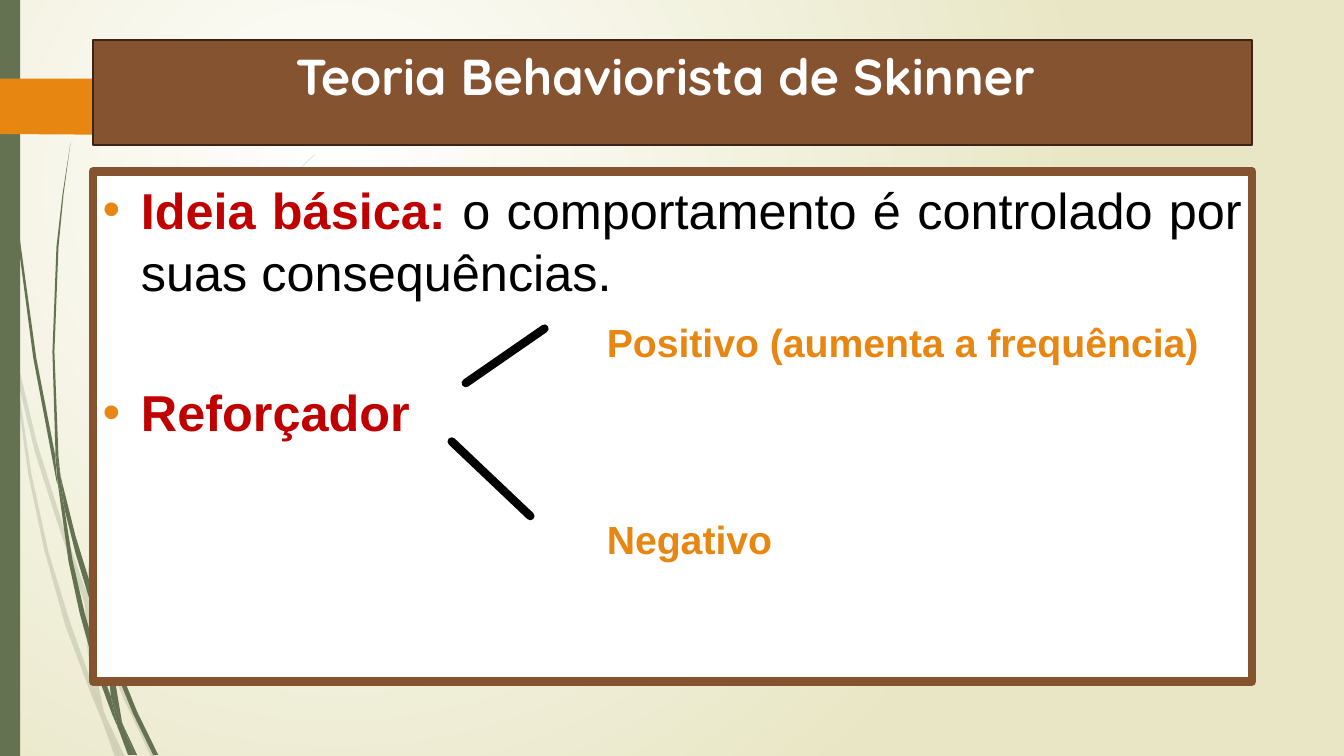
from pptx import Presentation
from pptx.dml.color import RGBColor
from pptx.enum.shapes import MSO_CONNECTOR, MSO_SHAPE
from pptx.enum.text import MSO_ANCHOR, MSO_AUTO_SIZE, PP_ALIGN
from pptx.oxml import parse_xml
from pptx.oxml.ns import nsdecls, qn
from pptx.util import Pt
from lxml import etree

PX = 9144  # EMU per px, 100 px to the inch
RECTANGLE = MSO_SHAPE.RECTANGLE
STRAIGHT = MSO_CONNECTOR.STRAIGHT
TOP = MSO_ANCHOR.TOP
CENTER, JUSTIFY = PP_ALIGN.CENTER, PP_ALIGN.JUSTIFY
NO_AUTOFIT = MSO_AUTO_SIZE.NONE
TITLE_ONLY = 5

COLORS = {
    "white": "FFFFFF", "cream": "E8E6C4", "moss": "647252", "orange": "E78712",
    "brown": "865331", "dark brown": "3B2415", "red": "C00000", "black": "000000",
}

# Outlines of the grass blades, in px from the slide's corner
PALE_BLADES = [
    [(11, 350), (9, 322), (0, 282), (0, 299), (10, 344)],
    [(58, 522), (84, 599), (85, 586), (62, 520), (36, 437), (14, 345), (17, 376), (35, 450)],
    [(92, 607), (88, 596), (88, 610), (123, 694), (150, 751), (155, 751), (127, 692)],
    [(119, 751), (124, 751), (105, 711)],
    [(93, 683), (70, 619), (48, 547), (31, 469), (17, 376), (11, 350), (28, 470), (44, 546),
     (65, 621), (92, 693), (101, 714), (99, 707)],
    [(84, 599), (87, 646), (93, 683), (96, 692), (105, 711), (103, 706), (91, 646), (88, 608)],
    [(88, 584), (97, 522), (110, 462), (160, 349), (229, 245), (268, 198), (290, 175), (312, 154),
     (312, 153), (289, 175), (268, 197), (228, 244), (158, 348), (107, 461), (93, 521), (85, 584),
     (85, 586), (88, 596)],
    [(101, 714), (114, 751), (119, 751)],
    [(88, 608), (88, 596), (85, 586), (84, 599)],
    [(96, 692), (93, 683), (99, 707), (101, 714), (119, 751), (105, 711)],
]
GREEN_BLADES = [
    [(7, 110), (17, 233), (33, 355), (56, 477), (57, 481), (55, 457), (55, 453), (36, 355),
     (19, 232), (8, 109), (5, 48), (4, 0), (3, 0), (4, 48)],
    [(88, 592), (106, 645), (106, 631), (93, 590), (75, 532), (60, 472), (64, 505), (75, 549)],
    [(113, 649), (110, 641), (111, 656), (132, 708), (152, 749), (157, 749), (136, 706)],
    [(110, 691), (98, 657), (84, 608), (72, 556), (64, 505), (57, 477), (68, 557), (79, 608),
     (93, 659), (111, 708), (117, 722), (116, 717)],
    [(60, 472), (58, 453), (54, 349), (58, 245), (63, 193), (70, 141), (62, 193), (56, 245),
     (52, 349), (55, 449)],
    [(133, 749), (136, 749), (122, 719)],
    [(57, 477), (64, 505), (60, 472), (55, 449), (55, 453)],
    [(117, 722), (127, 749), (131, 749)],
    [(106, 645), (110, 691), (116, 706), (122, 719), (121, 716), (111, 656), (109, 651)],
    [(116, 706), (110, 691), (116, 717), (117, 722), (130, 749), (133, 749), (122, 719)],
]
TAB_OUTLINE = [(173, 108), (148, 133), (146, 134), (0, 133), (0, 78), (146, 78), (148, 79),
               (173, 104)]


def rgb(name):
    return RGBColor.from_string(COLORS[name])


def paint(shape, fill, outline=None, weight=0):
    shape.shadow.inherit = False
    shape.fill.solid()
    shape.fill.fore_color.rgb = rgb(fill)
    if outline:
        shape.line.color.rgb = rgb(outline)
        shape.line.width = Pt(weight)
    else:
        shape.line.fill.background()


def place(shape, box):
    shape.left, shape.top, shape.width, shape.height = (side * PX for side in box)


def set_font(font, size, color, bold=True, name="Arial"):
    font.name, font.size, font.bold = name, Pt(size), bold
    font.color.rgb = rgb(color)


def paint_background(slide):
    """Radial gradient, white in the upper left, cream at the edges."""
    slide.background.fill.gradient()
    old = slide.background.fill._xPr.find(qn("a:gradFill"))
    gradient = parse_xml(
        f'<a:gradFill rotWithShape="1" {nsdecls("a")}><a:gsLst>'
        f'<a:gs pos="0"><a:srgbClr val="{COLORS["white"]}"/></a:gs>'
        f'<a:gs pos="100000"><a:srgbClr val="{COLORS["cream"]}"/></a:gs></a:gsLst>'
        '<a:path path="circle"><a:fillToRect l="50000" t="50000" r="100000" b="100000"/></a:path>'
        '</a:gradFill>')
    old.getparent().replace(old, gradient)


def add_outline(shapes, points, color, opacity=100):
    builder = shapes.build_freeform(*points[0], scale=PX)
    builder.add_line_segments(points[1:], close=True)
    outline = builder.convert_to_shape()
    paint(outline, color)
    if opacity < 100:
        tint = next(outline.element.spPr.iter(qn("a:srgbClr")))
        etree.SubElement(tint, qn("a:alpha"), val=str(opacity * 1000))


def add_decoration(slide, box):
    """Grass blades, the moss band filling the box, and the orange tab."""
    for blades, opacity in ((PALE_BLADES, 20), (GREEN_BLADES, 100)):
        tuft = slide.shapes.add_group_shape()
        for blade in blades:
            add_outline(tuft.shapes, blade, "moss", opacity)
    band = slide.shapes.add_shape(RECTANGLE, *(side * PX for side in box))
    paint(band, "moss")
    add_outline(slide.shapes, TAB_OUTLINE, "orange")


def add_title(slide, box):
    title = slide.shapes.title
    slide.shapes.element.append(title.element)  # in front of the decoration
    place(title, box)
    paint(title, "brown", "dark brown", 1.25)
    frame = title.text_frame
    frame.text = "Teoria Behaviorista de Skinner "
    frame.vertical_anchor = TOP
    frame.auto_size = NO_AUTOFIT
    heading = frame.paragraphs[0]
    heading.alignment = CENTER
    set_font(heading.font, 36, "white", name="Quicksand")


def indent(paragraph, margin, bulleted):
    properties = paragraph._p.get_or_add_pPr()
    properties.set("marL", str(margin * PX))
    properties.set("indent", str(-margin * PX if bulleted else 0))
    if bulleted:
        color = etree.SubElement(properties, qn("a:buClr"))
        etree.SubElement(color, qn("a:srgbClr"), val=COLORS["orange"])
        etree.SubElement(properties, qn("a:buFont"), typeface="Arial")
        etree.SubElement(properties, qn("a:buChar"), char="•")


def add_branch(slide, start, end):
    branch = slide.shapes.add_connector(STRAIGHT, *(side * PX for side in (*start, *end)))
    branch.line.color.rgb = rgb("black")
    branch.line.width = Pt(6)
    branch.line._get_or_add_ln().set("cap", "rnd")
    etree.SubElement(branch.element.spPr, qn("a:effectLst"))


def add_reinforcer_panel(slide, box):
    left, top = box[:2]
    panel = slide.shapes.add_shape(RECTANGLE, *(side * PX for side in box))
    paint(panel, "white", "brown", 6)
    frame = panel.text_frame
    frame.word_wrap = True
    frame.vertical_anchor = TOP
    # text, size, colour, left margin, bulleted, space before
    lines = [
        ("Ideia básica: ", 36, "red", 38, True, 0),
        ("Positivo (aumenta a frequência)", 28, "orange", 500, False, 10),
        ("Reforçador", 36, "red", 38, True, 10),
        ("Negativo", 28, "orange", 500, False, 51),
    ]
    for number, (text, size, color, margin, bulleted, space) in enumerate(lines):
        paragraph = frame.add_paragraph() if number else frame.paragraphs[0]
        paragraph.alignment = JUSTIFY
        paragraph.space_before = Pt(space)
        paragraph.line_spacing = 1.04
        indent(paragraph, margin, bulleted)
        paragraph.add_run().text = text
        set_font(paragraph.font, size, color)
    idea = frame.paragraphs[0].add_run()
    idea.text = "o comportamento é controlado por suas consequências."
    set_font(idea.font, 36, "black", bold=False)
    add_branch(slide, (left + 356, top + 268), (left + 434, top + 342))
    add_branch(slide, (left + 370, top + 210), (left + 448, top + 156))


def main():
    presentation = Presentation()
    presentation.slide_width, presentation.slide_height = 1333 * PX, 750 * PX
    slide = presentation.slides.add_slide(presentation.slide_layouts[TITLE_ONLY])
    paint_background(slide)
    add_decoration(slide, (0, 0, 20, 750))
    add_title(slide, (92, 40, 1150, 104))
    add_reinforcer_panel(slide, (92, 170, 1150, 506))
    presentation.save("out.pptx")


if __name__ == "__main__":
    main()
